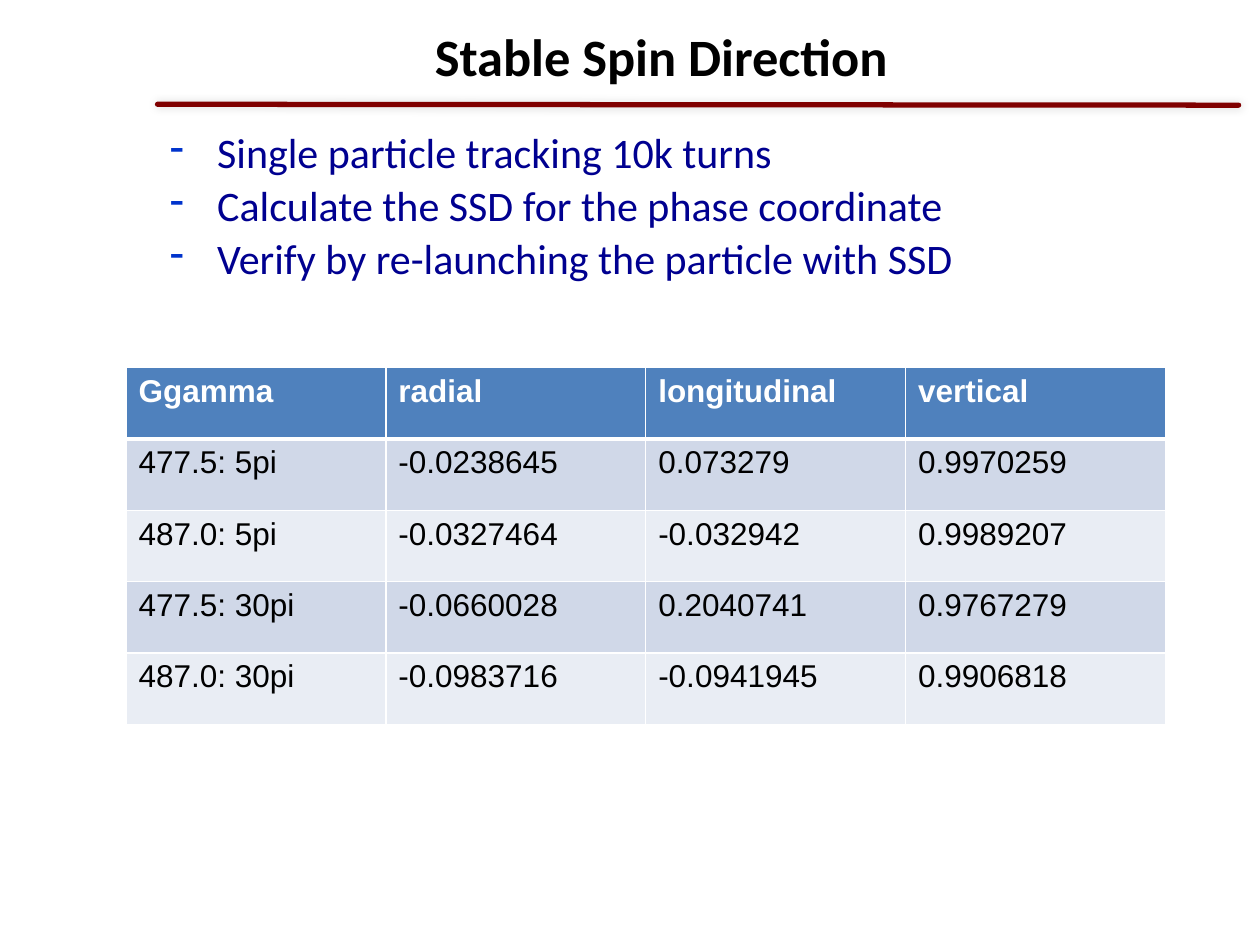
from lxml import etree
from pptx import Presentation
from pptx.dml.color import RGBColor
from pptx.enum.shapes import MSO_CONNECTOR
from pptx.enum.text import MSO_ANCHOR, PP_ALIGN
from pptx.oxml import parse_xml
from pptx.oxml.ns import nsdecls, qn
from pptx.util import Pt

WHITE = RGBColor(0xFF, 0xFF, 0xFF)
BLACK = RGBColor(0x00, 0x00, 0x00)
MAROON = RGBColor(0x80, 0x00, 0x00)
NAVY = RGBColor(0x00, 0x00, 0x90)
BULLET_BLUE = RGBColor(0x00, 0x33, 0xCC)
HEADER_BLUE = RGBColor(0x4F, 0x81, 0xBD)
BANDS = (RGBColor(0xD0, 0xD8, 0xE8), RGBColor(0xE9, 0xED, 0xF4))

STEPS = [
    "Single particle tracking 10k turns",
    "Calculate the SSD for the phase coordinate",
    "Verify by re-launching the particle with SSD",
]
SPIN_ROWS = [
    ("Ggamma", "radial", "longitudinal", "vertical"),
    ("477.5: 5pi", "-0.0238645", "0.073279", "0.9970259"),
    ("487.0: 5pi", "-0.0327464", "-0.032942", "0.9989207"),
    ("477.5: 30pi", "-0.0660028", "0.2040741", "0.9767279"),
    ("487.0: 30pi", "-0.0983716", "-0.0941945", "0.9906818"),
]


def add_run(p, text, font, size, color, bold=False):
    r = p.add_run()
    r.text = text
    r.font.name = font
    r.font.size = Pt(size)
    r.font.bold = bold
    r.font.color.rgb = color


def add_text_frame(s, x, y, w, h):
    tf = s.shapes.add_textbox(Pt(x), Pt(y), Pt(w), Pt(h)).text_frame
    tf.word_wrap = True
    return tf


def add_header(s, x, y, w, h):
    # Rule with rounded ends and a soft shadow
    rule = s.shapes.add_connector(MSO_CONNECTOR.STRAIGHT, Pt(x + 36), Pt(y + h),
                                  Pt(x + w + 5.8), Pt(y + h + 0.5))
    rule.line.color.rgb = MAROON
    rule.line.width = Pt(3)
    rule.line._get_or_add_ln().set("cap", "rnd")
    rule._element.spPr.append(parse_xml(
        f'<a:effectLst {nsdecls("a")}><a:outerShdw blurRad="{Pt(5)}" dist="0" dir="13500000">'
        '<a:srgbClr val="000000"><a:alpha val="15000"/></a:srgbClr>'
        '</a:outerShdw></a:effectLst>'))

    # Title
    tf = add_text_frame(s, x, y, w, h)
    tf.vertical_anchor = MSO_ANCHOR.MIDDLE
    p = tf.paragraphs[0]
    p.alignment = PP_ALIGN.CENTER
    add_run(p, "Stable Spin Direction", "Calibri", 30, BLACK, bold=True)


def set_dash_bullet(p, indent):
    pPr = p._p.get_or_add_pPr()
    pPr.set("marL", str(Pt(indent)))
    pPr.set("indent", str(Pt(-indent)))
    color = etree.SubElement(pPr, qn("a:buClr"))
    etree.SubElement(color, qn("a:srgbClr"), val=str(BULLET_BLUE))
    etree.SubElement(pPr, qn("a:buChar"), char="-")


def add_steps(s, x, y, w, h):
    tf = add_text_frame(s, x, y, w, h)
    for i, step in enumerate(STEPS):
        p = tf.add_paragraph() if i else tf.paragraphs[0]
        set_dash_bullet(p, 27)
        p.line_spacing = 0.9
        if i:
            p.space_before = Pt(4.3)
        add_run(p, step, "Calibri", 24, NAVY)


def set_borders(cell, bottom, top):
    tcPr = cell._tc.get_or_add_tcPr()
    widths = {"lnL": 1, "lnR": 1, "lnT": top, "lnB": bottom}
    for i, (side, width) in enumerate(widths.items()):
        tcPr.insert(i, parse_xml(
            f'<a:{side} {nsdecls("a")} w="{Pt(width)}"><a:solidFill>'
            f'<a:srgbClr val="{WHITE}"/></a:solidFill></a:{side}>'))


def add_spin_table(s, x, y, w, h):
    n_rows, n_cols = len(SPIN_ROWS), len(SPIN_ROWS[0])
    table = s.shapes.add_table(n_rows, n_cols, Pt(x), Pt(y), Pt(w), Pt(h)).table
    for col in table.columns:
        col.width = Pt(w / n_cols)
    for i, values in enumerate(SPIN_ROWS):
        table.rows[i].height = Pt(h / n_rows)
        header = i == 0
        for j, value in enumerate(values):
            cell = table.cell(i, j)
            cell.fill.solid()
            cell.fill.fore_color.rgb = HEADER_BLUE if header else BANDS[(i - 1) % 2]
            set_borders(cell, bottom=3 if header else 1, top=3 if i == 1 else 1)
            add_run(cell.text_frame.paragraphs[0], value, "Arial", 18,
                    WHITE if header else BLACK, bold=header)


def main():
    prs = Presentation()
    prs.slide_width, prs.slide_height = Pt(720), Pt(540)
    s = prs.slides.add_slide(prs.slide_layouts[6])
    add_header(s, 54, 3.6, 648, 56)
    add_steps(s, 90, 72, 648, 72)
    add_spin_table(s, 72, 210, 594, 204)
    prs.save("out.pptx")


if __name__ == "__main__":
    main()
